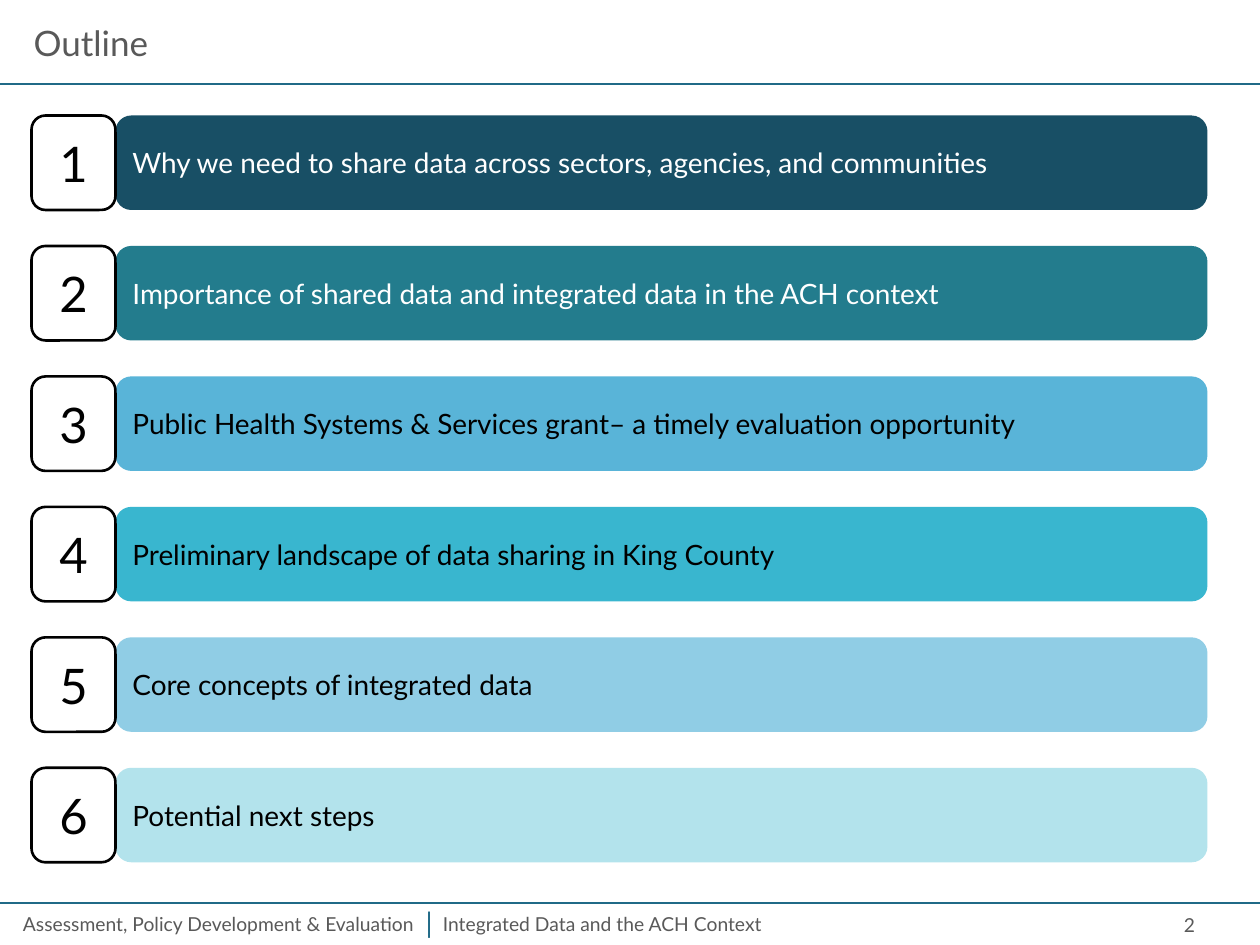
from pptx import Presentation
from pptx.dml.color import RGBColor
from pptx.enum.shapes import MSO_CONNECTOR, MSO_SHAPE
from pptx.enum.text import MSO_ANCHOR as Anchor, PP_ALIGN as Align
from pptx.oxml.ns import qn
from pptx.util import Emu, Pt
from lxml.etree import SubElement

PX = 9525
FONT = "Lato"
WHITE = RGBColor(0xFF, 0xFF, 0xFF)
BLACK = RGBColor(0x00, 0x00, 0x00)
GRAY = RGBColor(0x59, 0x59, 0x59)
TEAL = RGBColor(0x20, 0x6A, 0x87)
NAVY = RGBColor(0x18, 0x4F, 0x65)
SEA = RGBColor(0x23, 0x7C, 0x8D)
SKY = RGBColor(0x59, 0xB4, 0xD8)
CYAN = RGBColor(0x39, 0xB6, 0xCF)
PALE_BLUE = RGBColor(0x90, 0xCD, 0xE5)
PALE_CYAN = RGBColor(0xB3, 0xE3, 0xEC)

TITLE = "Outline"
TOPICS = [
    ("Why we need to share data across sectors, agencies, and communities", NAVY, WHITE),
    ("Importance of shared data and integrated data in the ACH context", SEA, WHITE),
    ("Public Health Systems & Services grant– a timely evaluation opportunity", SKY, BLACK),
    ("Preliminary landscape of data sharing in King County", CYAN, BLACK),
    ("Core concepts of integrated data", PALE_BLUE, BLACK),
    ("Potential next steps", PALE_CYAN, BLACK),
]
FOOTER = [
    ("Assessment, Policy Development & Evaluation", (8, 690, 344, 28), 11, GRAY, Align.LEFT),
    ("Integrated Data and the ACH Context", (328, 690, 488, 28), 11, GRAY, Align.LEFT),
    ("|", (311, 685, 32, 36), 16, TEAL, Align.CENTER),
    ("2", (696, 690, 224, 29), 11, GRAY, Align.RIGHT),
]
RULE_TOPS = [64, 688]
SLIDE_WIDTH, SLIDE_HEIGHT = 960, 720
TITLE_AREA = (16, 16, 928, 32)
NUMBER_LEFT, NUMBER_WIDTH = 24, 64
BAR_LEFT, BAR_WIDTH = NUMBER_LEFT + NUMBER_WIDTH, 832
ROW_HEIGHT, FIRST_TOP, LAST_TOP = 72, 88, 585


def px(*lengths):
    return [Emu(round(length * PX)) for length in lengths]


def write(shape, text, size, color, align=Align.LEFT):
    frame = shape.text_frame
    frame.text = text
    frame.word_wrap = True
    frame.vertical_anchor = Anchor.MIDDLE
    para = frame.paragraphs[0]
    para.alignment = align
    font = para.runs[0].font
    font.name, font.size, font.color.rgb = FONT, Pt(size), color


def add_rule(slide, top):
    rule = slide.shapes.add_connector(MSO_CONNECTOR.STRAIGHT, *px(0, top, SLIDE_WIDTH, top))
    rule.line.color.rgb = TEAL
    rule.line.width = Pt(1.5)
    SubElement(rule._element.spPr, qn("a:effectLst"))


def add_box(slide, area, fill, outline=None):
    box = slide.shapes.add_shape(MSO_SHAPE.ROUNDED_RECTANGLE, *px(*area))
    box.shadow.inherit = False
    box.fill.solid()
    box.fill.fore_color.rgb = fill
    if outline is None:
        box.line.fill.background()
    else:
        box.line.color.rgb = outline
        box.line.width = Pt(1.5)
    return box


def main():
    deck = Presentation()
    deck.slide_width, deck.slide_height = px(SLIDE_WIDTH, SLIDE_HEIGHT)
    slide = deck.slides.add_slide(deck.slide_layouts[5])

    title = slide.shapes.title
    title.left, title.top, title.width, title.height = px(*TITLE_AREA)
    write(title, TITLE, 20, GRAY)

    for top in RULE_TOPS:
        add_rule(slide, top)
    for text, area, size, color, align in FOOTER:
        write(slide.shapes.add_textbox(*px(*area)), text, size, color, align)

    pitch = (LAST_TOP - FIRST_TOP) / (len(TOPICS) - 1)
    for index, (text, fill, color) in enumerate(TOPICS):
        top = FIRST_TOP + index * pitch
        bar = add_box(slide, (BAR_LEFT, top, BAR_WIDTH, ROW_HEIGHT), fill)
        write(bar, text, 16, color)
        number = add_box(slide, (NUMBER_LEFT, top, NUMBER_WIDTH, ROW_HEIGHT), WHITE, BLACK)
        write(number, str(index + 1), 28, BLACK, Align.CENTER)

    deck.save("out.pptx")


if __name__ == "__main__":
    main()
